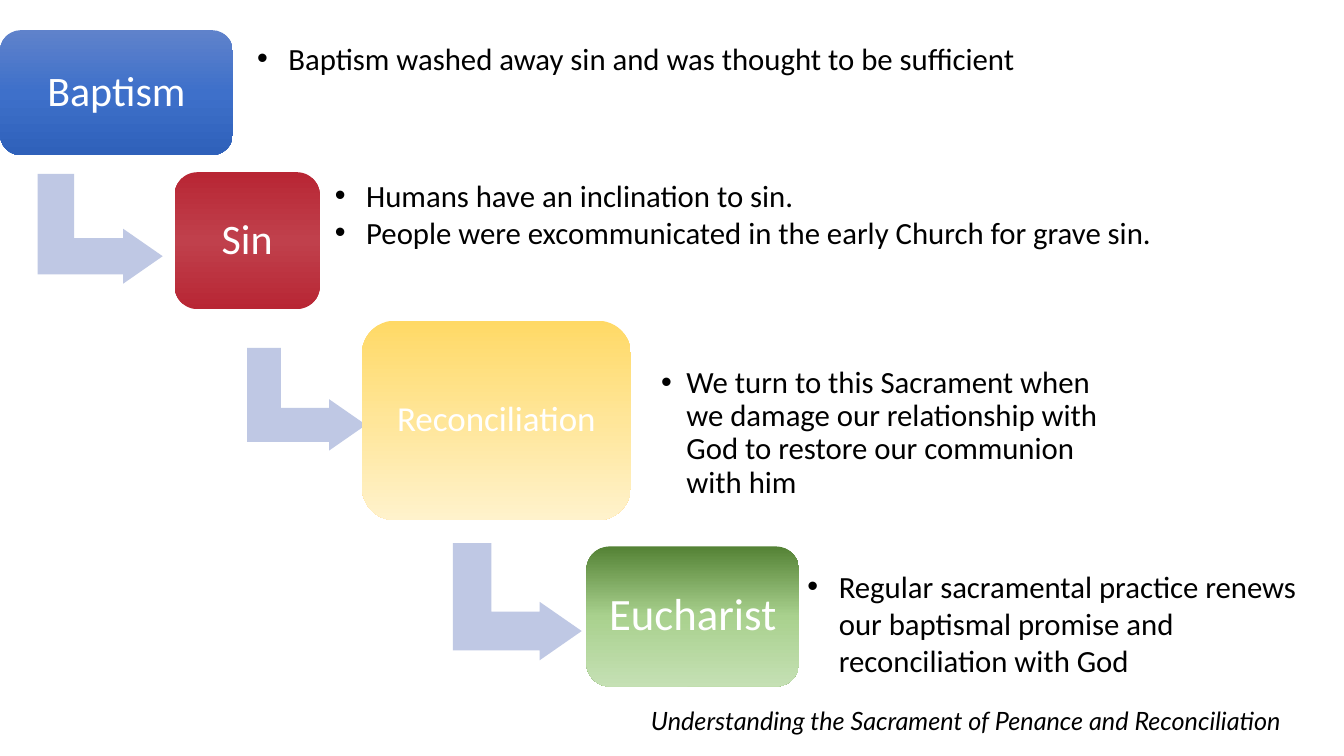
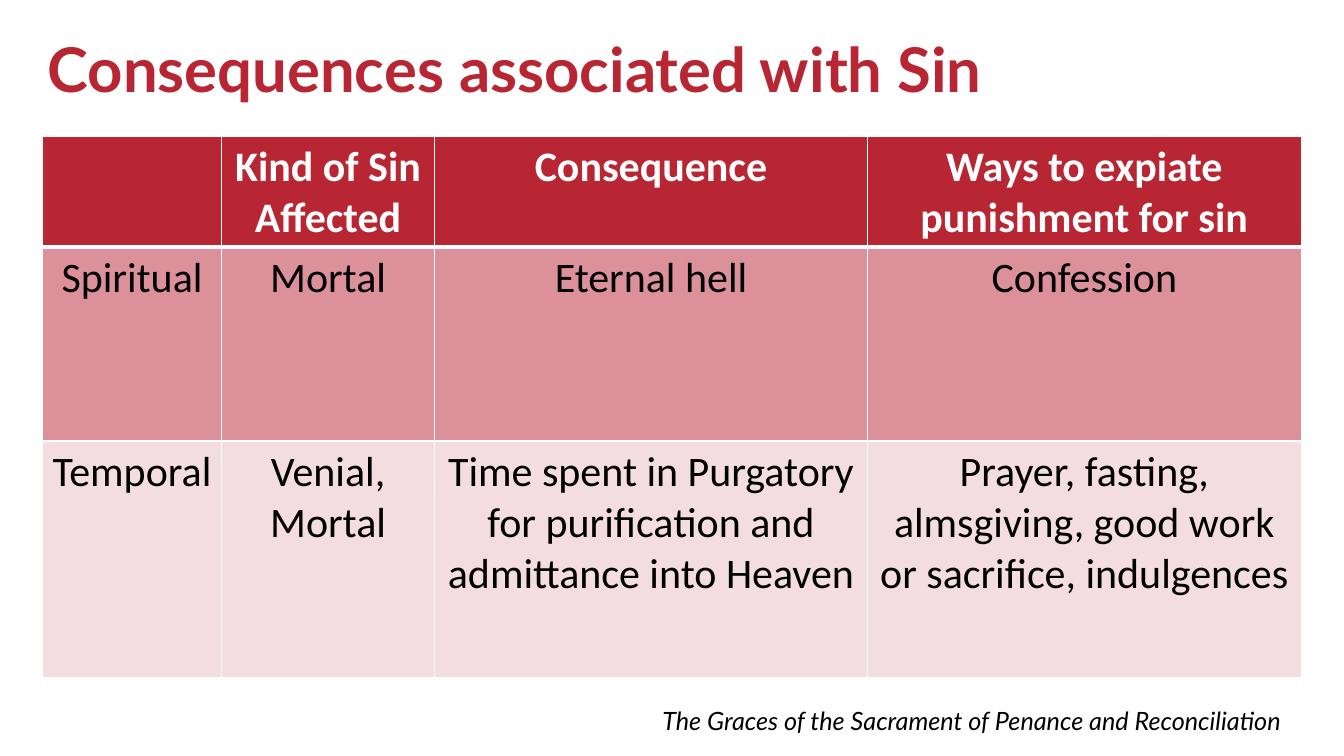
from copy import deepcopy
from lxml import etree
from pptx import Presentation
from pptx.dml.color import RGBColor
from pptx.enum.shapes import MSO_SHAPE
from pptx.enum.text import MSO_ANCHOR, PP_ALIGN
from pptx.oxml.ns import qn
from pptx.util import Cm, Pt

ROUND, BENT = MSO_SHAPE.ROUNDED_RECTANGLE, MSO_SHAPE.BENT_UP_ARROW
TOP, MID = MSO_ANCHOR.TOP, MSO_ANCHOR.MIDDLE
LEFT, MIDST, RIGHT = PP_ALIGN.LEFT, PP_ALIGN.CENTER, PP_ALIGN.RIGHT
BODY, HEAD = "Calibri", "Lato"
PAD = Cm(0.13)

HUES = {
    "white": "FFFFFF", "black": "000000", "red": "B82634",
    "arrow": "BFC8E4", "rose": "DB909A", "blush": "F4DDE0",
}
FADES = {
    "blue": ["5F82CB", "3E70CA", "2F61BA"],
    "red": ["B82634", "C0404C", "B82634"],
    "gold": ["FFD966", "FFE699", "FFF2CC"],
    "green": ["548235", "A9D18E", "C5E0B4"],
}


def write(frame, lines, size, hue="black", font=BODY, align=LEFT,
          bold=False, slant=False, gap=1.0, indent=0):
    frame.word_wrap = True
    frame.margin_left = frame.margin_right = PAD
    frame.margin_top = frame.margin_bottom = PAD
    for n, line in enumerate(lines):
        para = frame.paragraphs[0] if n == 0 else frame.add_paragraph()
        para.alignment, para.line_spacing = align, gap
        run = para.add_run()
        run.text = line
        run.font.name, run.font.size = font, Pt(size)
        run.font.bold, run.font.italic = bold, slant
        run.font.color.rgb = RGBColor.from_string(HUES[hue])
        if indent:
            props = para._p.get_or_add_pPr()
            props.set("marL", str(Cm(indent)))
            props.set("indent", str(-Cm(indent)))
            etree.SubElement(props, qn("a:buFont")).set("typeface", "Arial")
            etree.SubElement(props, qn("a:buChar")).set("char", "•")


def label(slide, place, lines, size, anchor=TOP, **style):
    box = slide.shapes.add_textbox(*map(Cm, place))
    box.text_frame.vertical_anchor = anchor
    write(box.text_frame, lines, size, **style)


deck = Presentation()
deck.slide_width, deck.slide_height = Cm(33.87), Cm(19.05)
blank = deck.slide_layouts[6]
steps, chart = [deck.slides.add_slide(blank) for _ in range(2)]

feet = [
    (steps, "Understanding the Sacrament of Penance and Reconciliation"),
    (chart, "The Graces of the Sacrament of Penance and Reconciliation"),
]
for slide, text in feet:
    label(slide, (12.62, 17.65, 19.79, 1.2), [text], 18,
          font=HEAD, align=RIGHT, slant=True)

arrows = [
    (1.14, 4.19, 2.77, 3.15),
    (6.43, 8.56, 2.59, 3),
    (11.56, 13.54, 2.95, 3.25),
]
for place in arrows:
    arrow = steps.shapes.add_shape(BENT, *map(Cm, place))
    for n, part in enumerate([0.33, 0.25, 0.36]):
        arrow.adjustments[n] = part
    arrow.rotation = 90
    arrow.shadow.inherit = False
    arrow.fill.solid()
    arrow.fill.fore_color.rgb = RGBColor.from_string(HUES["arrow"])
    arrow.line.fill.background()

boxes = [
    ("Baptism", "blue", 30, (0, 0.76, 5.87, 3.15)),
    ("Sin", "red", 30, (4.4, 4.34, 3.66, 3.45)),
    ("Reconciliation", "gold", 25, (9.12, 8.08, 6.78, 5.03)),
    ("Eucharist", "green", 32, (14.78, 13.77, 5.36, 3.53)),
]
for text, fade, size, place in boxes:
    box = steps.shapes.add_shape(ROUND, *map(Cm, place))
    box.shadow.inherit = False
    box.line.fill.background()
    box.fill.gradient()
    box.fill.gradient_angle = 270
    stops = box.element.spPr.find(".//" + qn("a:gsLst"))
    stops.append(deepcopy(stops[0]))
    for n, stop in enumerate(box.fill.gradient_stops):
        stop.position = n / 2
        stop.color.rgb = RGBColor.from_string(FADES[fade][n])
    box.text_frame.vertical_anchor = MID
    write(box.text_frame, [text], size, "white", align=MIDST, gap=0.9)

notes = [
    ((6.35, 0.86, 21.08, 1.07), TOP, 1, 0.79,
     ["Baptism washed away sin and was thought to be sufficient"]),
    ((8.31, 4.32, 23.04, 2.06), TOP, 1, 0.79,
     ["Humans have an inclination to sin.",
      "People were excommunicated in the early Church for grave sin."]),
    ((16.53, 8.92, 12, 4), MID, 0.9, 0.64,
     ["We turn to this Sacrament when we damage our relationship with "
      "God to restore our communion with him"]),
    ((20.22, 14.17, 12.85, 3.05), TOP, 1, 0.79,
     ["Regular sacramental practice renews our baptismal promise and "
      "reconciliation with God"]),
]
for place, anchor, gap, indent, lines in notes:
    label(steps, place, lines, 22, anchor, gap=gap, indent=indent)

label(chart, (1.07, 0, 29.21, 3.68), ["Consequences associated with Sin"], 44,
      MID, hue="red", font=HEAD, bold=True, gap=0.9)

rows = [
    ["", "Kind of Sin Affected", "Consequence",
     "Ways to expiate punishment for sin"],
    ["Spiritual", "Mortal", "Eternal hell", "Confession"],
    ["Temporal", "Venial, Mortal",
     "Time spent in Purgatory for purification and admittance into Heaven",
     "Prayer, fasting, almsgiving, good work or sacrifice, indulgences"],
]
fills = ["red", "rose", "blush"]
wides = [4.52, 5.36, 10.92, 10.92]
highs = [2.54, 4.88, 5.97]
table = chart.shapes.add_table(
    len(rows), len(wides), Cm(1.07), Cm(3.43),
    Cm(sum(wides)), Cm(sum(highs))).table
for n, wide in enumerate(wides):
    table.columns[n].width = Cm(wide)
for r, row in enumerate(rows):
    table.rows[r].height = Cm(highs[r])
    edges = {"L": 1, "R": 1, "T": 3 if r == 1 else 1, "B": 3 if r == 0 else 1}
    for c, text in enumerate(row):
        cell = table.cell(r, c)
        cell.margin_left = cell.margin_right = PAD
        cell.margin_top = cell.margin_bottom = PAD
        cell.fill.solid()
        cell.fill.fore_color.rgb = RGBColor.from_string(HUES[fills[r]])
        props = cell._tc.get_or_add_tcPr()
        for n, (side, wide) in enumerate(edges.items()):
            edge = etree.Element(qn("a:ln" + side), w=str(Pt(wide)))
            paint = etree.SubElement(edge, qn("a:solidFill"))
            etree.SubElement(paint, qn("a:srgbClr")).set("val", HUES["white"])
            props.insert(n, edge)
        if text:
            write(cell.text_frame, [text], 30, "black" if r else "white",
                  align=MIDST, bold=r == 0)

deck.save("out.pptx")
